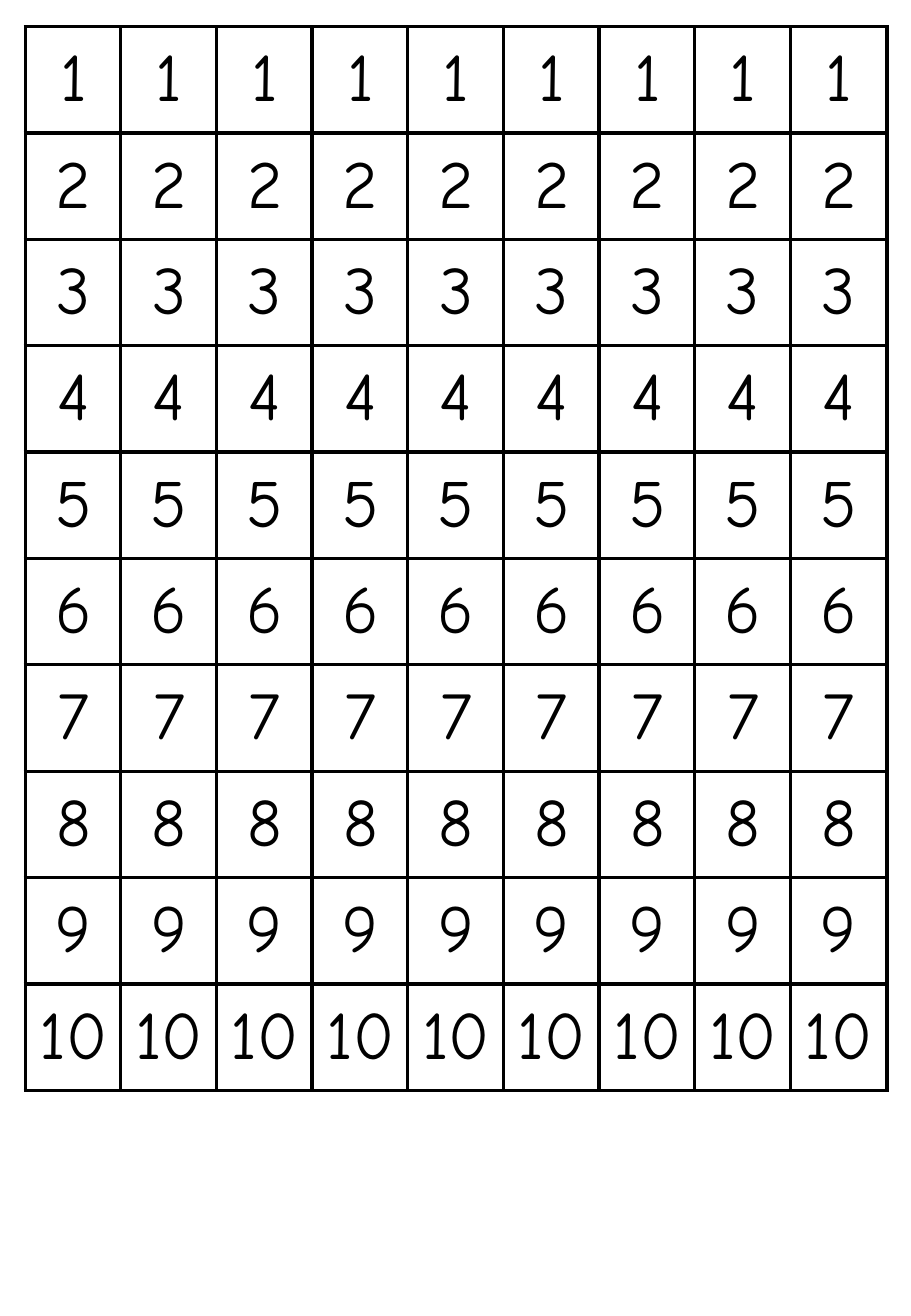
import pptx
import pptx.dml.color
import pptx.enum.text
import pptx.oxml
import pptx.oxml.ns
import pptx.util

Pt = pptx.util.Pt
BLACK = pptx.dml.color.RGBColor(0, 0, 0)
WHITE = pptx.dml.color.RGBColor(255, 255, 255)
FONT = "Comic Neue"

STRIPS = 9
NUMBERS = range(1, 11)
LEFT, TOP = 14.9, 15.8
STEP = 56.7
WIDTH, HEIGHT = 57.3, 63.07


def add_borders(cell):
    props = cell._tc.get_or_add_tcPr()
    for side in ("lnL", "lnR", "lnT", "lnB"):
        props.append(pptx.oxml.parse_xml(
            f'<a:{side} {pptx.oxml.ns.nsdecls("a")} w="{Pt(2.25)}">'
            f'<a:solidFill><a:srgbClr val="{BLACK}"/></a:solidFill>'
            f'</a:{side}>'))


def fill_cell(cell, number):
    add_borders(cell)
    cell.fill.solid()
    cell.fill.fore_color.rgb = WHITE
    cell.vertical_anchor = pptx.enum.text.MSO_ANCHOR.MIDDLE
    cell.text = str(number)
    para = cell.text_frame.paragraphs[0]
    para.alignment = pptx.enum.text.PP_ALIGN.CENTER
    para.font.name = FONT
    para.font.size = Pt(40)
    para.font.color.rgb = BLACK


def add_strip(slide, left):
    """Add a one-column table that counts down the page."""
    count = len(NUMBERS)
    table = slide.shapes.add_table(
        count, 1, Pt(left), Pt(TOP), Pt(WIDTH), Pt(HEIGHT * count)).table
    table.first_row = False
    table.horz_banding = False
    for row, number in enumerate(NUMBERS):
        fill_cell(table.cell(row, 0), number)


def main():
    deck = pptx.Presentation()
    deck.slide_width = Pt(540)
    deck.slide_height = Pt(780)
    slide = deck.slides.add_slide(deck.slide_layouts[6])
    for strip in range(STRIPS):
        add_strip(slide, LEFT + strip * STEP)
    deck.save("out.pptx")


if __name__ == "__main__":
    main()
